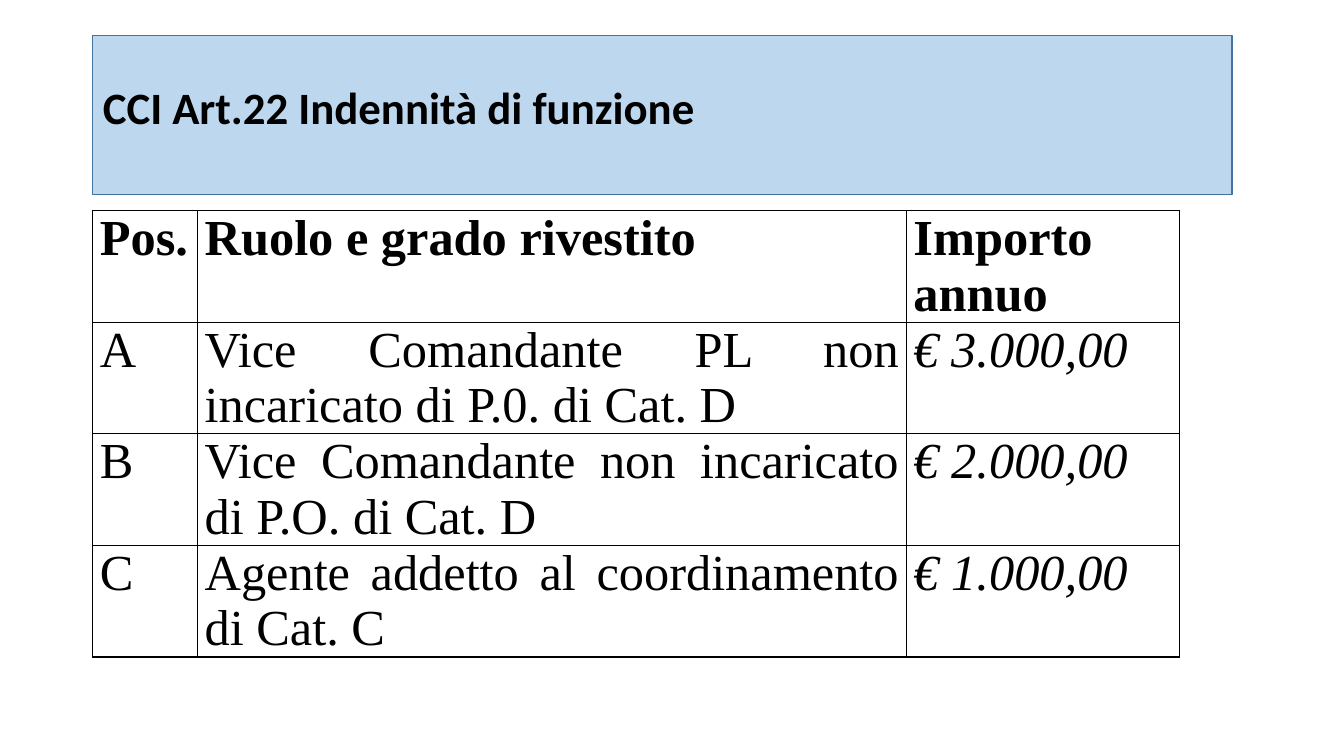
import pptx
import pptx.util
import pptx.dml.color
import pptx.enum.shapes
import pptx.enum.text
import pptx.oxml
import pptx.oxml.ns

Inches, Pt = pptx.util.Inches, pptx.util.Pt
ALIGN = pptx.enum.text.PP_ALIGN
ANCHOR = pptx.enum.text.MSO_ANCHOR
COLORS = {"banner": "BDD7EE", "edge": "43739E", "ink": "000000", "paper": "FFFFFF"}
LEFT = Inches(0.92)


def rgb(name):
    return pptx.dml.color.RGBColor.from_string(COLORS[name])


def add_borders(cell):
    tcPr = cell._tc.get_or_add_tcPr()
    for i, side in enumerate(("lnL", "lnR", "lnT", "lnB")):
        tcPr.insert(i, pptx.oxml.parse_xml(
            f'<a:{side} {pptx.oxml.ns.nsdecls("a")} w="{Pt(1)}"><a:solidFill>'
            f'<a:srgbClr val="{COLORS["ink"]}"/></a:solidFill></a:{side}>'))


prs = pptx.Presentation()
prs.slide_width, prs.slide_height = Inches(13.33), Inches(7.5)
s = prs.slides.add_slide(prs.slide_layouts[5])

# Banner, placed behind the title
banner = s.shapes.add_shape(pptx.enum.shapes.MSO_SHAPE.RECTANGLE,
                            LEFT, Inches(0.35), Inches(11.3), Inches(1.58))
banner.shadow.inherit = False
banner.fill.solid()
banner.fill.fore_color.rgb = rgb("banner")
banner.line.color.rgb = rgb("edge")
banner.line.width = Pt(1)
title = s.shapes.title
title._element.addprevious(banner._element)

# Title
title.left, title.top = LEFT, Inches(0.37)
title.width, title.height = Inches(11.5), Inches(1.45)
tf = title.text_frame
tf.text = "CCI Art.22 Indennità di funzione"
tf.auto_size = pptx.enum.text.MSO_AUTO_SIZE.NONE
tf.vertical_anchor = ANCHOR.MIDDLE
p = tf.paragraphs[0]
p.alignment, p.line_spacing = ALIGN.LEFT, 0.9
font = p.runs[0].font
font.name, font.size, font.bold = "Calibri", Pt(32), True
font.color.rgb = rgb("ink")

# Table of allowances
rows = [
    ("Pos.", "Ruolo e grado rivestito", "Importo annuo"),
    ("A", "Vice Comandante PL non incaricato di P.0. di Cat. D", "€ 3.000,00"),
    ("B", "Vice Comandante non incaricato di P.O. di Cat. D", "€ 2.000,00"),
    ("C", "Agente addetto al coordinamento di Cat. C", "€ 1.000,00"),
]
widths = [1.04, 7.03, 2.71]
row_height = 0.94
table = s.shapes.add_table(len(rows), len(widths), LEFT, Inches(2.09),
                           Inches(sum(widths)), Inches(row_height * len(rows))).table
for column, width in zip(table.columns, widths):
    column.width = Inches(width)

for i, row in enumerate(rows):
    for j, text in enumerate(row):
        cell = table.cell(i, j)
        cell.margin_left = cell.margin_right = Inches(0.07)
        cell.margin_top = cell.margin_bottom = 0
        cell.fill.solid()
        cell.fill.fore_color.rgb = rgb("paper")
        add_borders(cell)
        cell.text_frame.text = text
        p = cell.text_frame.paragraphs[0]
        p.alignment = ALIGN.JUSTIFY
        p.space_before = p.space_after = Pt(6)
        font = p.runs[0].font
        font.name, font.size = "Times New Roman", Pt(36)
        font.bold = i == 0
        font.italic = i > 0 and j == 2
        font.color.rgb = rgb("ink")

prs.save("out.pptx")
